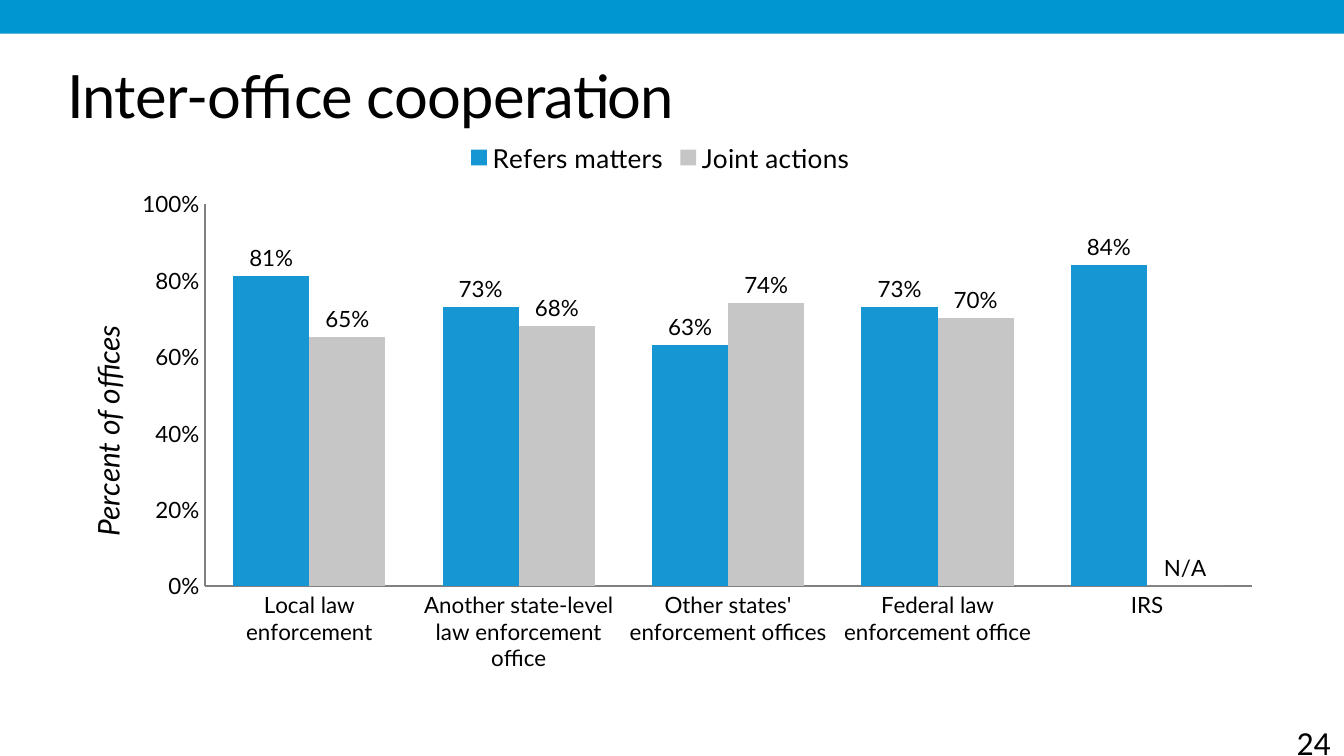
from lxml.etree import SubElement
from pptx import Presentation
from pptx.chart.data import CategoryChartData
from pptx.dml.color import RGBColor
from pptx.enum.chart import XL_CHART_TYPE, XL_LABEL_POSITION, XL_LEGEND_POSITION, XL_TICK_MARK
from pptx.enum.shapes import MSO_SHAPE
from pptx.enum.text import MSO_ANCHOR, PP_ALIGN
from pptx.oxml.ns import qn
from pptx.util import Pt

BAND_BLUE = RGBColor(0x00, 0x96, 0xD2)
SERIES_BLUE = RGBColor(0x16, 0x96, 0xD2)
SERIES_GRAY = RGBColor(0xC6, 0xC6, 0xC6)
AXIS_GRAY = RGBColor(0x80, 0x80, 0x80)
BLACK = RGBColor(0, 0, 0)

CATEGORIES = [
    "Local law enforcement",
    "Another state-level law enforcement office",
    "Other states' enforcement offices",
    "Federal law enforcement office",
    "IRS",
]
SERIES = [
    ("Refers matters", (0.81, 0.73, 0.63, 0.73, 0.84), SERIES_BLUE),
    ("Joint actions", (0.65, 0.68, 0.74, 0.7, 0), SERIES_GRAY),
]


def set_layout(element, index, **fractions):
    """Place a chart part by fractions of the chart area."""
    for old in element.findall(qn("c:layout")):
        element.remove(old)
    layout = SubElement(element, qn("c:layout"))
    element.insert(index, layout)
    manual = SubElement(layout, qn("c:manualLayout"))
    if "w" in fractions:
        SubElement(manual, qn("c:layoutTarget")).set("val", "inner")
    for mode in ("xMode", "yMode"):
        SubElement(manual, qn(f"c:{mode}")).set("val", "edge")
    for name, value in fractions.items():
        SubElement(manual, qn(f"c:{name}")).set("val", str(value))


class SlideBuilder:
    heading_font = "Lato"
    number_font = "Calibri"

    def __init__(self, page):
        self.page = page

    def style(self, font, size, name=None, italic=False):
        font.name = name or self.heading_font
        font.size = Pt(size)
        font.bold = False
        font.italic = italic
        font.color.rgb = BLACK

    def add_text(self, frame, text, size, name=None):
        frame.word_wrap = True
        frame.vertical_anchor = MSO_ANCHOR.TOP
        para = frame.paragraphs[0]
        span = para.add_run()
        span.text = text
        self.style(span.font, size, name)
        return para, span

    def band(self, left, top, width, height):
        box = self.page.shapes.add_shape(
            MSO_SHAPE.RECTANGLE, Pt(left), Pt(top), Pt(width), Pt(height))
        box.shadow.inherit = False
        box.fill.solid()
        box.fill.fore_color.rgb = BAND_BLUE
        box.line.fill.background()

    def title(self, text, left, top, width, height):
        box = self.page.shapes.title
        box.left, box.top, box.width, box.height = Pt(left), Pt(top), Pt(width), Pt(height)
        frame = box.text_frame
        frame.margin_left = frame.margin_top = frame.margin_right = frame.margin_bottom = 0
        para, span = self.add_text(frame, text, 32)
        para.alignment = PP_ALIGN.LEFT
        span.font._element.set("spc", "-40")

    def page_number(self, text, left, top, width, height):
        box = self.page.shapes.add_textbox(Pt(left), Pt(top), Pt(width), Pt(height))
        para, _ = self.add_text(box.text_frame, text, 18, self.number_font)
        para.alignment = PP_ALIGN.RIGHT

    def axis(self, axis):
        axis.has_major_gridlines = False
        axis.major_tick_mark = axis.minor_tick_mark = XL_TICK_MARK.NONE
        axis.format.line.color.rgb = AXIS_GRAY
        axis.format.line.width = Pt(1)
        self.style(axis.tick_labels.font, 12)

    def column_chart(self, left, top, width, height):
        data = CategoryChartData(number_format="0%")
        data.categories = CATEGORIES
        for name, values, _ in SERIES:
            data.add_series(name, values)
        chart = self.page.shapes.add_chart(
            XL_CHART_TYPE.COLUMN_CLUSTERED,
            Pt(left), Pt(top), Pt(width), Pt(height), data).chart
        chart.has_title = False
        self.style(chart.font, 10, self.number_font)

        chart.has_legend = True
        chart.legend.position = XL_LEGEND_POSITION.TOP
        chart.legend.include_in_layout = False
        self.style(chart.legend.font, 14)

        self.axis(chart.category_axis)
        value_axis = chart.value_axis
        self.axis(value_axis)
        value_axis.minimum_scale, value_axis.maximum_scale = 0, 1
        value_axis.major_unit = 0.2
        value_axis.tick_labels.number_format = "0%"
        value_axis.tick_labels.number_format_is_linked = False
        span = value_axis.axis_title.text_frame.paragraphs[0].add_run()
        span.text = "Percent of offices"
        self.style(span.font, 16, italic=True)

        plot = chart.plots[0]
        plot.gap_width = 75
        plot.overlap = 0
        plot.vary_by_categories = False
        for series, (_, _, color) in zip(plot.series, SERIES):
            series.format.fill.solid()
            series.format.fill.fore_color.rgb = color
            series.invert_if_negative = False
            labels = series.data_labels
            labels.show_value = True
            labels.number_format = "0%"
            labels.number_format_is_linked = False
            labels.position = XL_LABEL_POSITION.OUTSIDE_END
            self.style(labels.font, 12)

        missing = plot.series[1].points[4].data_label
        span = missing.text_frame.paragraphs[0].add_run()
        span.text = "N/A"
        self.style(span.font, 12)
        missing.position = XL_LABEL_POSITION.OUTSIDE_END

        set_layout(value_axis.axis_title._element, 1, x=0.03, y=0.35)
        plot_area = chart._chartSpace.find(qn("c:chart")).find(qn("c:plotArea"))
        set_layout(plot_area, 0, x=0.13, y=0.14, w=0.85, h=0.69)


def main():
    deck = Presentation()
    deck.slide_width, deck.slide_height = Pt(720), Pt(405)
    builder = SlideBuilder(deck.slides.add_slide(deck.slide_layouts[5]))
    builder.band(0, 0, 720, 18)
    builder.title("Inter-office cooperation", 36, 31.7, 648, 34)
    builder.column_chart(23.8, 67.7, 660, 296.6)
    builder.page_number("24", 648, 383, 72, 29)
    deck.save("out.pptx")


if __name__ == "__main__":
    main()
